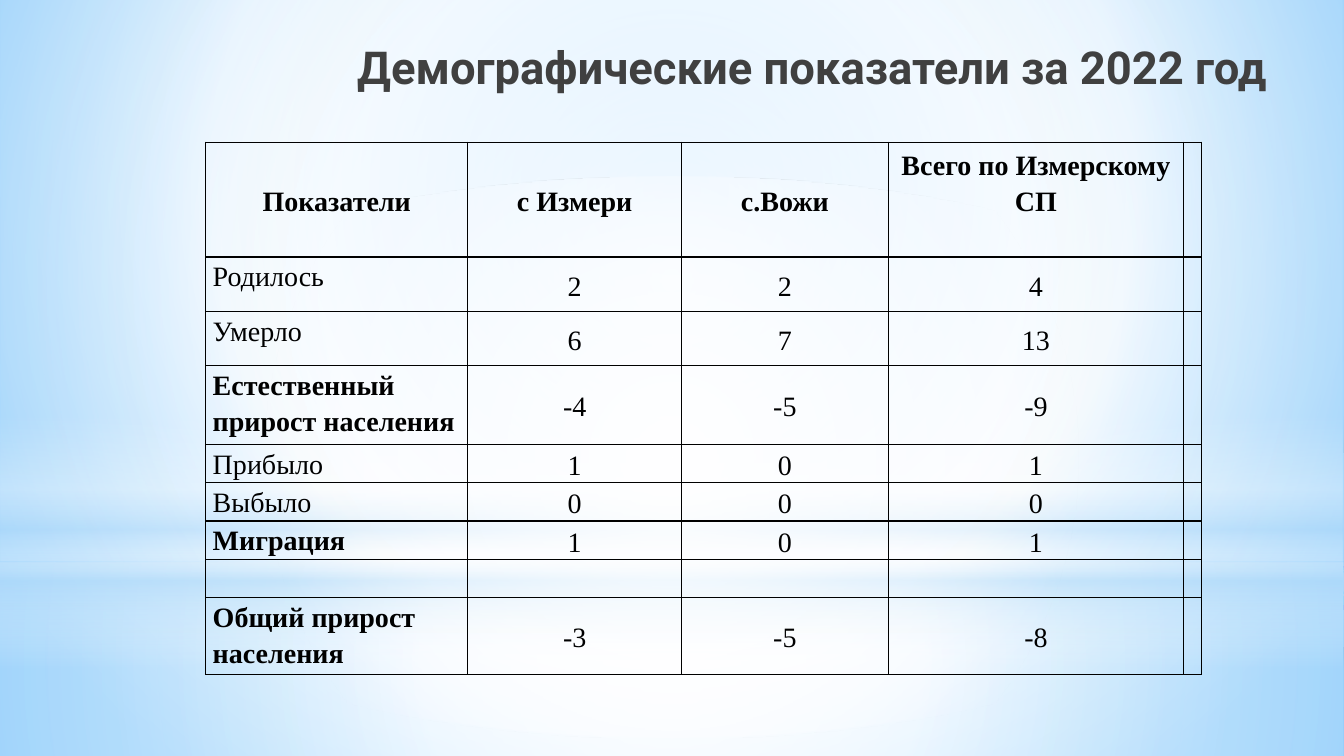
from lxml import etree
from pptx import Presentation
from pptx.dml.color import RGBColor
from pptx.enum.shapes import MSO_SHAPE
from pptx.enum.text import MSO_ANCHOR, MSO_AUTO_SIZE, PP_ALIGN
from pptx.oxml import parse_xml
from pptx.oxml.ns import nsdecls, qn
from pptx.util import Pt

PX = 9144
WIDTH, HEIGHT = 1333, 750
RECTANGLE, OVAL = MSO_SHAPE.RECTANGLE, MSO_SHAPE.OVAL
TOP, MIDDLE = MSO_ANCHOR.TOP, MSO_ANCHOR.MIDDLE
LEFT, CENTER, RIGHT = PP_ALIGN.LEFT, PP_ALIGN.CENTER, PP_ALIGN.RIGHT
NO_FIT = MSO_AUTO_SIZE.NONE

BLACK = RGBColor(0x00, 0x00, 0x00)
GRAY = RGBColor(0x40, 0x40, 0x40)
WHITE = RGBColor(0xFF, 0xFF, 0xFF)
PALE = RGBColor(0xB4, 0xDC, 0xFA)
SKY = RGBColor(0x9E, 0xD5, 0xFF)
BLUE = RGBColor(0x5B, 0xB9, 0xFF)

CENTRED = (50, 50, 50, 50)
PAGE_STOPS = [(0, SKY, 100), (60, WHITE, 100), (100, BLUE, 100)]
BACKDROP = [
    (RECTANGLE, (0, 558, WIDTH, 192), CENTRED,
     [(0, WHITE, 91), (37, WHITE, 76), (100, PALE, 79)]),
    (RECTANGLE, (0, 0, WIDTH, 558), CENTRED,
     [(0, WHITE, 89), (48, WHITE, 62), (100, PALE, 79)]),
    (RECTANGLE, (0, 412, WIDTH, 250), None,
     [(0, WHITE, 0), (29, WHITE, 30), (45, PALE, 40),
      (55, WHITE, 26), (65, PALE, 60), (100, WHITE, 0)]),
    (OVAL, (0, 175, WIDTH, 558), CENTRED, [(0, WHITE, 100), (56, WHITE, 0)]),
]

TITLE = "Демографические показатели за 2022 год"
COLUMNS = [260, 212, 205, 293, 18]
ROWS = [114, 54, 54, 78, 38, 38, 38, 38, 76]
INDICATORS = [
    ("Показатели", "с Измери", "с.Вожи", "Всего по Измерскому СП", ""),
    ("Родилось", "2", "2", "4", ""),
    ("Умерло", "6", "7", "13", ""),
    ("Естественный прирост населения", "-4", "-5", "-9", ""),
    ("Прибыло", "1", "0", "1", ""),
    ("Выбыло", "0", "0", "0", ""),
    ("Миграция", "1", "0", "1", ""),
    ("", "", "", "", ""),
    ("Общий прирост населения", "-3", "-5", "-8", ""),
]
TOTAL_ROWS = (3, 6, 8)


def px(*lengths):
    """Turn px lengths into EMU."""
    return [length * PX for length in lengths]


def apply(target, **values):
    """Set several attributes on one object."""
    for name, value in values.items():
        setattr(target, name, value)


def set_gradient(properties, stops, focus):
    """Swap a solid fill for a circular gradient, or a vertical one without focus."""
    marks = "".join(
        f'<a:gs pos="{place * 1000}"><a:srgbClr val="{color}">'
        f'<a:alpha val="{opacity * 1000}"/></a:srgbClr></a:gs>'
        for place, color, opacity in stops)
    if focus:
        left, top, right, bottom = (side * 1000 for side in focus)
        course = (f'<a:path path="circle"><a:fillToRect l="{left}" t="{top}" '
                  f'r="{right}" b="{bottom}"/></a:path>')
    else:
        course = '<a:lin ang="5400000" scaled="0"/>'
    gradient = parse_xml(f'<a:gradFill {nsdecls("a")} rotWithShape="1">'
                         f'<a:gsLst>{marks}</a:gsLst>{course}</a:gradFill>')
    properties.replace(properties.find(qn("a:solidFill")), gradient)


def add_backdrop(page):
    """Paint the page background and the glowing layers over it."""
    page.background.fill.solid()
    page.background.fill.fore_color.rgb = WHITE
    set_gradient(page.element.find(".//" + qn("p:bgPr")), PAGE_STOPS, (20, 10, 20, 60))
    for kind, place, focus, stops in BACKDROP:
        layer = page.shapes.add_shape(kind, *px(*place))
        layer.shadow.inherit = False
        layer.line.fill.background()
        layer.fill.solid()
        set_gradient(layer.element.spPr, stops, focus)


def write(para, text, **font):
    """Put one formatted run into a paragraph."""
    span = para.add_run()
    span.text = text
    color = font.pop("color")
    apply(span.font, **font)
    span.font.color.rgb = color


def place_title(page):
    """Move the title placeholder in front of the backdrop and fill it."""
    title = page.shapes.title
    page.shapes.element.append(title.element)
    left, top, width, height = px(217, 30, 1050, 85)
    apply(title, left=left, top=top, width=width, height=height)
    apply(title.text_frame, vertical_anchor=TOP, margin_top=9 * PX,
          word_wrap=True, auto_size=NO_FIT)
    para = title.text_frame.paragraphs[0]
    para.alignment = RIGHT
    write(para, TITLE, name="Roboto", size=Pt(32.4), bold=True, color=GRAY)


def add_borders(cell):
    """Draw a thin black line on every side of a cell."""
    properties = cell._tc.get_or_add_tcPr()
    for index, side in enumerate(("lnL", "lnR", "lnT", "lnB")):
        line = etree.Element(qn(f"a:{side}"), w=str(Pt(1)))
        fill = etree.SubElement(line, qn("a:solidFill"))
        etree.SubElement(fill, qn("a:srgbClr"), val=str(BLACK))
        properties.insert(index, line)


def fill_cell(cell, text, row, column):
    """Format one table cell by its place and write its text."""
    is_header, is_label = row == 0, column == 0
    top_label = is_label and not is_header
    apply(cell, margin_left=7 * PX, margin_right=7 * PX, margin_top=0, margin_bottom=0,
          vertical_anchor=TOP if top_label else MIDDLE)
    if is_header and column == 3:
        cell.margin_bottom = 36 * PX
    cell.fill.background()
    add_borders(cell)
    if text:
        para = cell.text_frame.paragraphs[0]
        apply(para, alignment=LEFT if top_label else CENTER, line_spacing=1.15)
        write(para, text, name="Times New Roman", size=Pt(20), color=BLACK,
              bold=is_header or (is_label and row in TOTAL_ROWS))


def add_indicators(page):
    """Build the table of demographic indicators."""
    frame = page.shapes.add_table(len(ROWS), len(COLUMNS),
                                  *px(204, 141, sum(COLUMNS), sum(ROWS)))
    table = frame.table
    apply(table, first_row=False, horz_banding=False)
    for column, width in zip(table.columns, COLUMNS):
        column.width = width * PX
    for row, height in zip(table.rows, ROWS):
        row.height = height * PX
    for row, values in enumerate(INDICATORS):
        for column, text in enumerate(values):
            fill_cell(table.cell(row, column), text, row, column)


def main():
    """Build the slide and save it."""
    deck = Presentation()
    deck.slide_width, deck.slide_height = px(WIDTH, HEIGHT)
    page = deck.slides.add_slide(deck.slide_layouts[5])
    add_backdrop(page)
    place_title(page)
    add_indicators(page)
    deck.save("out.pptx")


if __name__ == "__main__":
    main()
